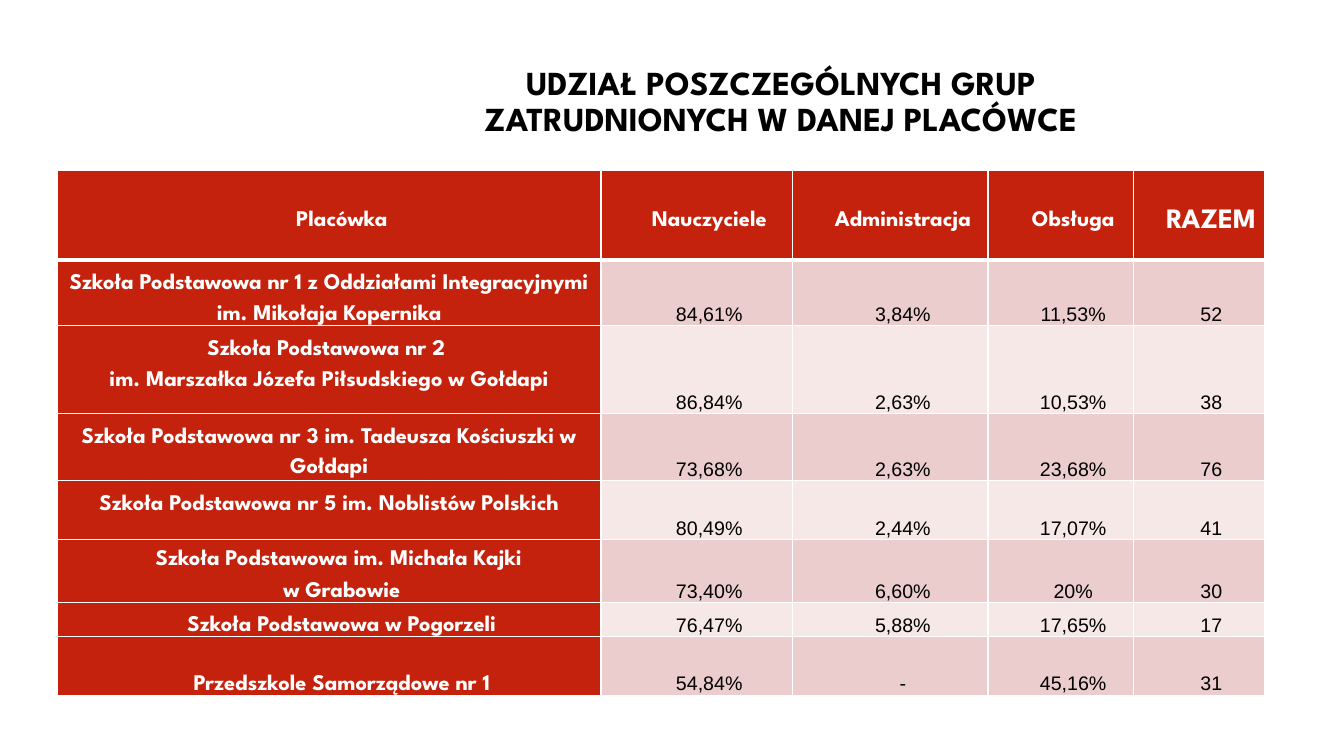
from dataclasses import dataclass

from lxml import etree
from pptx import Presentation
from pptx import util as u
from pptx.dml.color import RGBColor
from pptx.enum import text
from pptx.oxml.ns import qn


@dataclass(frozen=True)
class Theme:
    heading_font: str = "League Spartan"
    value_font: str = "Arial"
    black: str = "000000"
    white: str = "FFFFFF"
    red: str = "C4220D"
    bands: tuple[str, str] = ("EACDCC", "F5E8E7")
    title: int = 24
    total: int = 20
    label: int = 16
    value: int = 14


@dataclass(frozen=True)
class School:
    name: str
    values: tuple[str, str, str, str]
    height: float
    top: bool = False


T = Theme()
MIDDLE, BOTTOM, TOP = (text.MSO_ANCHOR.MIDDLE, text.MSO_ANCHOR.BOTTOM,
                       text.MSO_ANCHOR.TOP)
HEADERS = ("Placówka", "Nauczyciele", "Administracja", "Obsługa", "RAZEM")
HEADER_HEIGHT = 0.89
WIDTHS = (5.39, 1.9, 1.94, 1.44, 1.3)
SCHOOLS = (
    School("Szkoła Podstawowa nr 1 z Oddziałami Integracyjnymi im. Mikołaja Kopernika",
           ("84,61%", "3,84%", "11,53%", "52"), 0.61, True),
    School("Szkoła Podstawowa nr 2 \vim. Marszałka Józefa Piłsudskiego w Gołdapi",
           ("86,84%", "2,63%", "10,53%", "38"), 0.87, True),
    School("Szkoła Podstawowa nr 3 im. Tadeusza Kościuszki w Gołdapi",
           ("73,68%", "2,63%", "23,68%", "76"), 0.67, True),
    School("Szkoła Podstawowa nr 5 im. Noblistów Polskich",
           ("80,49%", "2,44%", "17,07%", "41"), 0.58, True),
    School("Szkoła Podstawowa im. Michała Kajki \nw Grabowie",
           ("73,40%", "6,60%", "20%", "30"), 0.63),
    School("Szkoła Podstawowa w Pogorzeli",
           ("76,47%", "5,88%", "17,65%", "17"), 0.33),
    School("Przedszkole Samorządowe nr 1",
           ("54,84%", "-", "45,16%", "31"), 0.58),
)


def write(tf, content: str, *, size: int, color: str, font: str = T.heading_font,
          bold: bool = True, spacing: float = 1.54, after: float = 0.2,
          indented: bool = True) -> None:
    tf.text = content
    for p in tf.paragraphs:
        p.alignment = text.PP_ALIGN.CENTER
        p.line_spacing = spacing
        p.space_before = u.Pt(0)
        p.space_after = u.Pt(after)
        pPr = p._p.get_or_add_pPr()
        pPr.set("marL", str(u.Inches(0.26 if indented else 0)))
        pPr.set("indent", str(u.Inches(-0.01 if indented else 0)))
        for br in p._p.findall(qn("a:br")):
            etree.SubElement(br, qn("a:rPr"), sz=str(size * 100))
        for r in p.runs:
            r.font.name = font
            r.font.size = u.Pt(size)
            r.font.bold = bold
            r.font.color.rgb = RGBColor.from_string(color)


def format_cell(cell, fill: str, anchor, *, top: float = 0, upper: float = 1,
                lower: float = 1) -> None:
    cell.vertical_anchor = anchor
    cell.margin_left = cell.margin_right = u.Inches(0.05)
    cell.margin_top, cell.margin_bottom = u.Inches(top), 0
    tcPr = cell._tc.get_or_add_tcPr()
    for side, width in zip("LRTB", (1, 1, upper, lower)):
        ln = etree.SubElement(tcPr, qn(f"a:ln{side}"), w=str(u.Pt(width)))
        solid = etree.SubElement(ln, qn("a:solidFill"))
        etree.SubElement(solid, qn("a:srgbClr"), val=T.white)
    cell.fill.solid()
    cell.fill.fore_color.rgb = RGBColor.from_string(fill)


def add_title(s) -> None:
    sp = s.shapes.title
    sp.left, sp.top, sp.width, sp.height = map(u.Inches, (4.4, 0.45, 6.69, 1.14))
    tf = sp.text_frame
    tf.word_wrap = True
    tf.auto_size = text.MSO_AUTO_SIZE.NONE
    tf.vertical_anchor = MIDDLE
    write(tf, "UDZIAŁ POSZCZEGÓLNYCH GRUP ZATRUDNIONYCH W DANEJ PLACÓWCE",
          size=T.title, color=T.black, spacing=0.9, after=0, indented=False)


def add_staff_table(s) -> None:
    heights = (HEADER_HEIGHT, *(school.height for school in SCHOOLS))
    tbl = s.shapes.add_table(len(heights), len(WIDTHS), u.Inches(0.57), u.Inches(1.69),
                             u.Inches(sum(WIDTHS)), u.Inches(sum(heights))).table
    for column, width in zip(tbl.columns, WIDTHS):
        column.width = u.Inches(width)
    for row, height in zip(tbl.rows, heights):
        row.height = u.Inches(height)
    for col, header in enumerate(HEADERS):
        cell = tbl.cell(0, col)
        format_cell(cell, T.red, MIDDLE, lower=3)
        write(cell.text_frame, header, color=T.white,
              size=T.total if header == HEADERS[-1] else T.label)
    for row, school in enumerate(SCHOOLS, 1):
        upper = 3 if row == 1 else 1
        cell = tbl.cell(row, 0)
        format_cell(cell, T.red, TOP if school.top else BOTTOM,
                    top=0.04 if school.top else 0, upper=upper)
        write(cell.text_frame, school.name, size=T.label, color=T.white,
              spacing=1.5 if school.top else 1.54, indented=not school.top)
        for col, value in enumerate(school.values, 1):
            cell = tbl.cell(row, col)
            format_cell(cell, T.bands[(row - 1) % 2], BOTTOM, upper=upper)
            write(cell.text_frame, value, size=T.value, color=T.black,
                  font=T.value_font, bold=False)


def main() -> None:
    prs = Presentation()
    prs.slide_width, prs.slide_height = u.Inches(13.33), u.Inches(7.5)
    s = prs.slides.add_slide(prs.slide_layouts[5])
    add_title(s)
    add_staff_table(s)
    prs.save("out.pptx")


if __name__ == "__main__":
    main()
